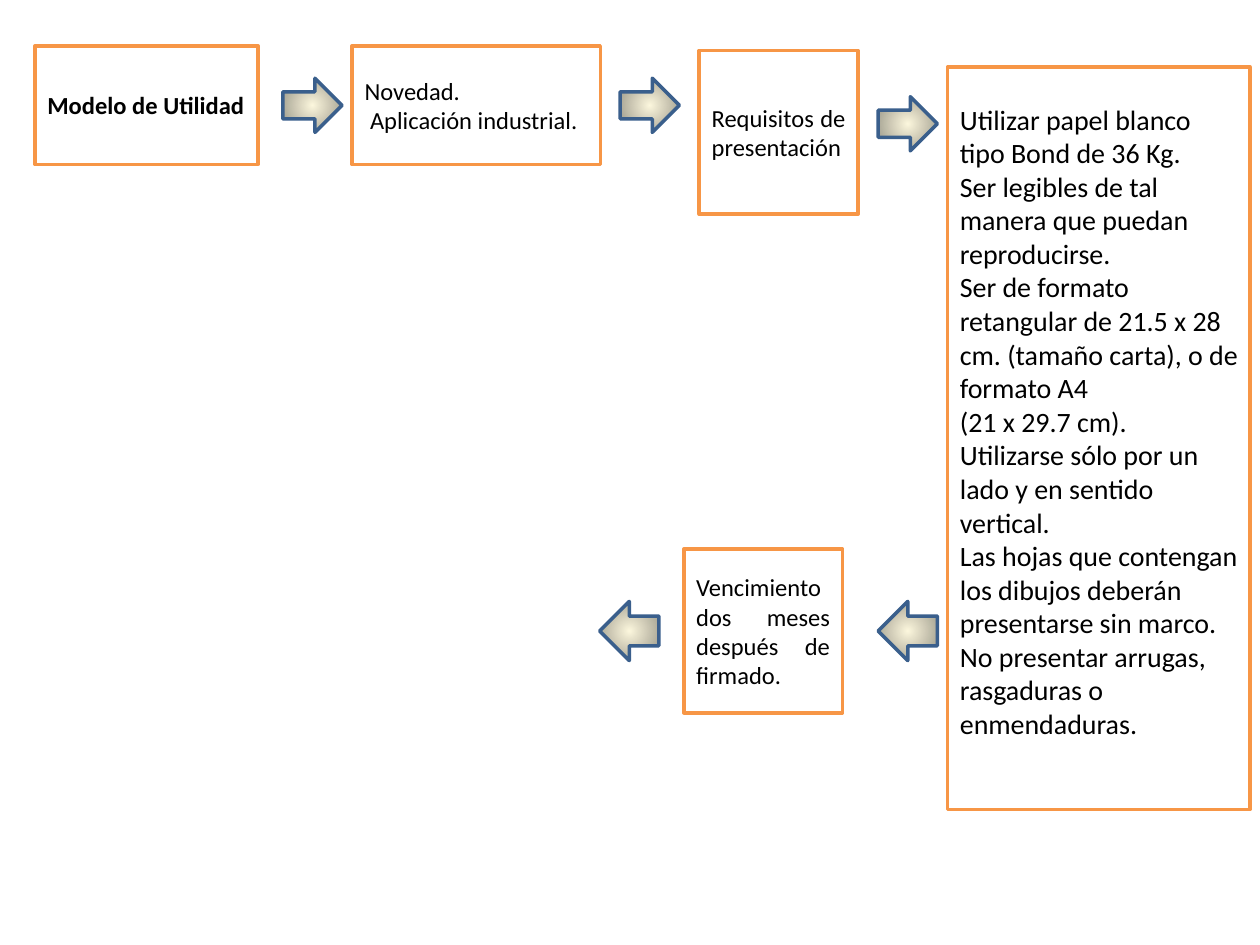
"""Build the utility model flow slide."""
from lxml import etree
from pptx import Presentation
from pptx.dml.color import RGBColor
from pptx.enum.shapes import MSO_SHAPE
from pptx.enum.text import MSO_ANCHOR, PP_ALIGN
from pptx.oxml.ns import qn
from pptx.util import Inches, Pt

WHITE = RGBColor(0xFF, 0xFF, 0xFF)
BLACK = RGBColor(0x00, 0x00, 0x00)
ORANGE = RGBColor(0xF7, 0x96, 0x46)
BLUE = RGBColor(0x3A, 0x5F, 0x8C)
CREAM = RGBColor(0xFC, 0xF7, 0xDD)
GREY = RGBColor(0x91, 0x8E, 0x81)

LEFT, JUSTIFY = PP_ALIGN.LEFT, PP_ALIGN.JUSTIFY
RIGHT_ARROW, LEFT_ARROW = MSO_SHAPE.RIGHT_ARROW, MSO_SHAPE.LEFT_ARROW

STEPS_IN_PERCENT = [
    ((2.77, 4.85, 17.7, 12.55), ["Modelo de Utilidad"], dict(bold=True)),
    ((27.95, 4.85, 19.7, 12.55), ["Novedad.", " Aplicación industrial."],
     dict(align=JUSTIFY)),
    ((55.5, 5.35, 12.6, 17.33), ["Requisitos de presentación"], dict(align=JUSTIFY)),
    ((75.2, 7.07, 24, 78.6), [
        "Utilizar papel blanco tipo Bond de 36 Kg.",
        "Ser legibles de tal manera que puedan reproducirse.",
        "Ser de formato retangular de 21.5 x 28 cm. (tamaño carta), o de formato A4",
        "(21 x 29.7 cm).",
        "Utilizarse sólo por un lado y en sentido vertical.",
        "Las hojas que contengan los dibujos deberán presentarse sin marco.",
        "No presentar arrugas, rasgaduras o enmendaduras.",
    ], dict(size=16, bottom=0.32, right=0.08)),
    ((54.27, 58.1, 12.6, 17.33), ["Vencimiento dos meses después de firmado."],
     dict(align=JUSTIFY)),
]

ARROW_WIDTH = 4.7
ARROWS_IN_PERCENT = [
    (RIGHT_ARROW, 22.45, 11.15, 5.73),
    (RIGHT_ARROW, 49.22, 11.15, 5.73),
    (RIGHT_ARROW, 69.7, 13.1, 5.73),
    (LEFT_ARROW, 69.7, 66.78, 6.27),
    (LEFT_ARROW, 47.6, 66.78, 6.27),
]

deck = Presentation()
deck.slide_width, deck.slide_height = Inches(10), Inches(7.5)
slide = deck.slides.add_slide(deck.slide_layouts[6])


def add_outlined(kind, place, colour):
    left, top, width, height = place
    across, down = deck.slide_width / 100, deck.slide_height / 100
    outlined = slide.shapes.add_shape(
        kind, round(left * across), round(top * down),
        round(width * across), round(height * down))
    outlined.shadow.inherit = False
    outlined.line.color.rgb = colour
    outlined.line.width = Pt(2)
    return outlined


def write(frame, lines, size=14, bold=False, align=LEFT, bottom=0.05, right=0.1):
    frame.word_wrap = True
    frame.vertical_anchor = MSO_ANCHOR.MIDDLE
    frame.margin_bottom = Inches(bottom)
    frame.margin_right = Inches(right)
    for index, line in enumerate(lines):
        paragraph = frame.add_paragraph() if index else frame.paragraphs[0]
        paragraph.alignment = align
        run = paragraph.add_run()
        run.text = line
        run.font.name = "Calibri"
        run.font.size = Pt(size)
        run.font.bold = bold
        run.font.color.rgb = BLACK


def fill_radial(arrow, centre, edge):
    arrow.fill.gradient()
    for stop, colour in zip(arrow.fill.gradient_stops, (centre, edge)):
        stop.color.rgb = colour
    gradient = arrow._element.spPr.find(qn("a:gradFill"))
    gradient.remove(gradient.find(qn("a:lin")))
    circle = etree.SubElement(gradient, qn("a:path"), {"path": "circle"})
    etree.SubElement(circle, qn("a:fillToRect"), dict.fromkeys("ltrb", "50000"))


for place, lines, text_format in STEPS_IN_PERCENT:
    step = add_outlined(MSO_SHAPE.RECTANGLE, place, ORANGE)
    step.fill.solid()
    step.fill.fore_color.rgb = WHITE
    write(step.text_frame, lines, **text_format)

for kind, left, middle, height in ARROWS_IN_PERCENT:
    arrow = add_outlined(kind, (left, middle - height / 2, ARROW_WIDTH, height), BLUE)
    fill_radial(arrow, CREAM, GREY)

deck.save("out.pptx")
